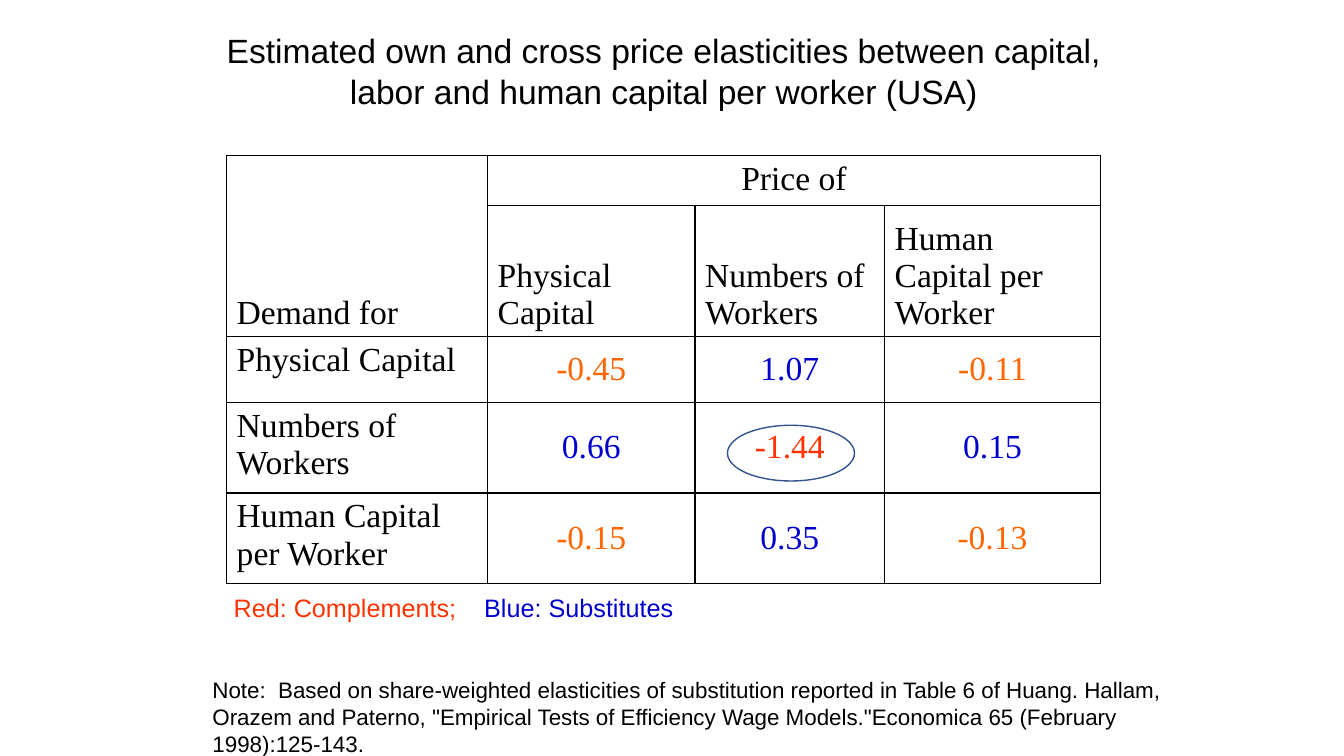
from lxml.etree import SubElement
from pptx import Presentation
from pptx.dml.color import RGBColor
from pptx.enum.shapes import MSO_SHAPE
from pptx.enum.text import MSO_ANCHOR as Anchor, MSO_AUTO_SIZE as AutoSize, PP_ALIGN as Align
from pptx.oxml.ns import qn
from pptx.util import Pt

BLACK, ORANGE, RED, BLUE = "000000", "FF6600", "FF3300", "0000CC"


def color(value):
    return RGBColor.from_string(value)


def add_run(paragraph, text, size, name, value):
    run = paragraph.add_run()
    run.text = text
    run.font.size = Pt(size)
    run.font.name = name
    run.font.color.rgb = color(value)


presentation = Presentation()
presentation.slide_width, presentation.slide_height = Pt(960), Pt(540)
slide = presentation.slides.add_slide(presentation.slide_layouts[6])

column_widths = [186.4, 148.2, 135.4, 154.2]
row_heights = [36, 93.6, 46.8, 64.8, 64.8]
rows = [
    [("Demand for", BLACK), ("Price of", BLACK), None, None],
    [None, ("Physical Capital", BLACK), ("Numbers of Workers", BLACK), ("Human Capital per Worker", BLACK)],
    [("Physical Capital", BLACK), ("-0.45", ORANGE), ("1.07", BLUE), ("-0.11", ORANGE)],
    [("Numbers of Workers", BLACK), ("0.66", BLUE), ("-1.44", RED), ("0.15", BLUE)],
    [("Human Capital per Worker", BLACK), ("-0.15", ORANGE), ("0.35", BLUE), ("-0.13", ORANGE)],
]

table = slide.shapes.add_table(
    len(rows), len(column_widths), Pt(161.9), Pt(110.9), Pt(sum(column_widths)), Pt(sum(row_heights))
).table
table.first_row = False
table.horz_banding = False
for column, width in zip(table.columns, column_widths):
    column.width = Pt(width)
for row, height in zip(table.rows, row_heights):
    row.height = Pt(height)

for row_index, row in enumerate(rows):
    for column_index, entry in enumerate(row):
        cell = table.cell(row_index, column_index)
        properties = cell._tc.get_or_add_tcPr()
        for side in ("a:lnL", "a:lnR", "a:lnT", "a:lnB"):
            border = SubElement(properties, qn(side), w=str(Pt(1)))
            SubElement(SubElement(border, qn("a:solidFill")), qn("a:srgbClr"), val=BLACK)
        cell.fill.background()
        if entry is None:
            continue
        cell.margin_left = cell.margin_right = Pt(7.2)
        cell.margin_top = cell.margin_bottom = Pt(3.6)
        paragraph = cell.text_frame.paragraphs[0]
        add_run(paragraph, entry[0], 24, "Times New Roman", entry[1])
        if row_index > 1 and column_index > 0:
            cell.vertical_anchor = Anchor.MIDDLE
            paragraph.alignment = Align.CENTER
        elif entry[0] == "Price of":
            cell.vertical_anchor = Anchor.TOP
            paragraph.alignment = Align.CENTER
        else:
            cell.vertical_anchor = Anchor.BOTTOM if row_index < 2 else Anchor.TOP

table.cell(0, 0).merge(table.cell(1, 0))
table.cell(0, 1).merge(table.cell(0, 3))

legend = [("Red: Complements;", RED), ("\tBlue: Substitutes", BLUE)]
note = [(
    "Note:  Based on share-weighted elasticities of substitution reported in Table 6 of Huang. "
    "Hallam, Orazem and Paterno, \"Empirical Tests of Efficiency Wage Models.\""
    "Economica 65 (February 1998):125-143.", BLACK)]
title = [("Estimated own and cross price elasticities between capital, "
          "labor and human capital per worker (USA)", BLACK)]
text_boxes = [
    (159.8, 419.8, 419.8, 28.8, 18, Align.LEFT, legend),
    (144.7, 479.5, 720, 65.5, 16, Align.LEFT, note),
    (144, 18, 660.2, 65.5, 24, Align.CENTER, title),
]
for left, top, width, height, size, alignment, runs in text_boxes:
    frame = slide.shapes.add_textbox(Pt(left), Pt(top), Pt(width), Pt(height)).text_frame
    frame.word_wrap = True
    frame.auto_size = AutoSize.SHAPE_TO_FIT_TEXT
    paragraph = frame.paragraphs[0]
    paragraph.alignment = alignment
    if runs is legend:
        tabs = SubElement(paragraph._p.get_or_add_pPr(), qn("a:tabLst"))
        SubElement(tabs, qn("a:tab"), pos=str(Pt(179)), algn="l")
    for text, value in runs:
        add_run(paragraph, text, size, "Arial", value)

ellipse = slide.shapes.add_shape(MSO_SHAPE.OVAL, Pt(519.6), Pt(303.8), Pt(90.8), Pt(39.8))
ellipse.shadow.inherit = False
ellipse.fill.background()
ellipse.line.color.rgb = color("325491")
ellipse.line.width = Pt(1)

presentation.save("out.pptx")
